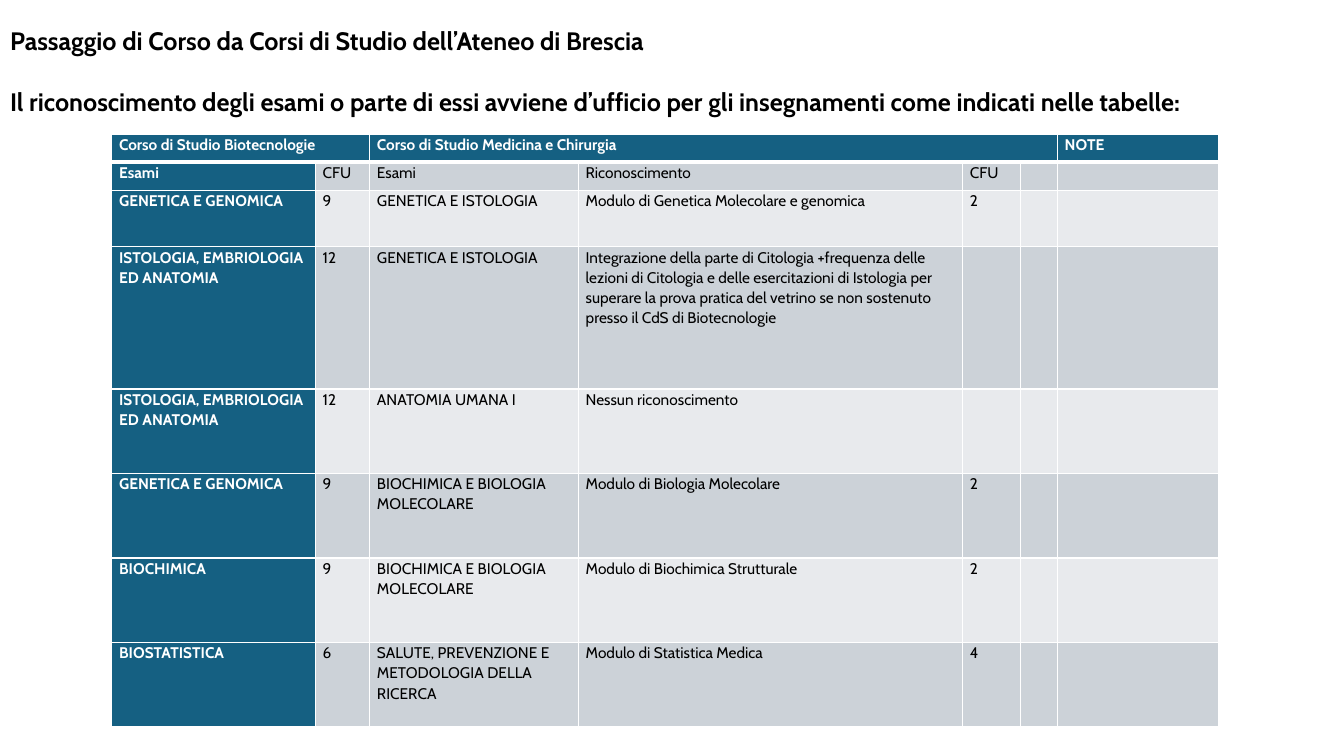
from dataclasses import dataclass

from lxml.etree import SubElement
from pptx import Presentation
from pptx.dml.color import RGBColor
from pptx.enum.text import MSO_ANCHOR, MSO_AUTO_SIZE, PP_ALIGN
from pptx.oxml.ns import qn
from pptx.util import Cm, Pt


@dataclass(frozen=True)
class Theme:
    """Colours, font and type sizes of the slide."""
    font: str = "Cabin"
    blue: str = "156082"
    dark: str = "CCD2D8"
    light: str = "E8EAED"
    white: str = "FFFFFF"
    black: str = "000000"
    title: int = 18
    body: int = 11


THEME = Theme()
TITLE = [
    "Passaggio di Corso da Corsi di Studio dell’Ateneo di Brescia",
    "Il riconoscimento degli esami o parte di essi avviene d’ufficio "
    "per gli insegnamenti come indicati nelle tabelle:",
]
COLS = [5.13, 1.37, 5.26, 9.68, 1.45, 0.94, 4.06]
HEIGHTS = [0.71, 0.71, 1.42, 3.58] + [2.13] * 4
SPANS = [(0, 1), (2, 5)]
ROWS = [
    ["Corso di Studio Biotecnologie", "", "Corso di Studio Medicina e Chirurgia",
     "", "", "", "NOTE"],
    ["Esami", "CFU", "Esami", "Riconoscimento", "CFU", "", ""],
    ["GENETICA E GENOMICA", "9", "GENETICA E ISTOLOGIA",
     "Modulo di Genetica Molecolare e genomica", "2", "", ""],
    ["ISTOLOGIA, EMBRIOLOGIA ED ANATOMIA", "12", "GENETICA E ISTOLOGIA",
     "Integrazione della parte di Citologia +frequenza delle lezioni di Citologia "
     "e delle esercitazioni di Istologia per superare la prova pratica del vetrino "
     "se non sostenuto presso il CdS di Biotecnologie", "", "", ""],
    ["ISTOLOGIA, EMBRIOLOGIA ED ANATOMIA", "12", "ANATOMIA UMANA I",
     "Nessun riconoscimento", "", "", ""],
    ["GENETICA E GENOMICA", "9", "BIOCHIMICA E BIOLOGIA MOLECOLARE",
     "Modulo di Biologia Molecolare", "2", "", ""],
    ["BIOCHIMICA", "9", "BIOCHIMICA E BIOLOGIA MOLECOLARE",
     "Modulo di Biochimica Strutturale", "2", "", ""],
    ["BIOSTATISTICA", "6", "SALUTE, PREVENZIONE E METODOLOGIA DELLA RICERCA",
     "Modulo di Statistica Medica", "4", "", ""],
]


def write(frame, lines, size, color, bold=False, after=0, spacing=1.0):
    """Write each line as a left-aligned paragraph in one format."""
    for i, line in enumerate(lines):
        para = frame.add_paragraph() if i else frame.paragraphs[0]
        para.alignment = PP_ALIGN.LEFT
        para.line_spacing = spacing
        para.space_before = Pt(0)
        para.space_after = Pt(after)
        if not line:
            SubElement(para._p, qn("a:endParaRPr"), sz=str(size * 100))
            continue
        run = para.add_run()
        run.text = line
        run.font.name = THEME.font
        run.font.size = Pt(size)
        run.font.bold = bold
        run.font.color.rgb = RGBColor.from_string(color)


def edge(cell, top, bottom):
    """Draw white borders round a cell, with the widths in points."""
    props = cell._tc.get_or_add_tcPr()
    for side, width in zip("LRTB", (1, 1, top, bottom)):
        line = SubElement(props, qn(f"a:ln{side}"), w=str(Pt(width)))
        fill = SubElement(line, qn("a:solidFill"))
        SubElement(fill, qn("a:srgbClr"), val=THEME.white)


def heading(slide, left, top, width, height):
    """Place the two-line title in its box."""
    title = slide.shapes.title
    title.left, title.top = Cm(left), Cm(top)
    title.width, title.height = Cm(width), Cm(height)
    frame = title.text_frame
    frame.word_wrap = True
    frame.auto_size = MSO_AUTO_SIZE.NONE
    frame.vertical_anchor = MSO_ANCHOR.TOP
    frame.margin_top = Cm(0.17)
    write(frame, TITLE, THEME.title, THEME.black, bold=True, after=22)


def grid(slide, left, top):
    """Place the table of recognised exams from its top left corner."""
    shape = slide.shapes.add_table(len(ROWS), len(COLS), Cm(left), Cm(top),
                                   Cm(sum(COLS)), Cm(sum(HEIGHTS)))
    table = shape.table
    table.first_row = table.horz_banding = False
    for col, width in zip(table.columns, COLS):
        col.width = Cm(width)
    for row, height in zip(table.rows, HEIGHTS):
        row.height = Cm(height)
    for start, end in SPANS:
        table.cell(0, start).merge(table.cell(0, end))
    for r, texts in enumerate(ROWS):
        for c, text in enumerate(texts):
            cell = table.cell(r, c)
            head = r == 0 or c == 0
            band = THEME.dark if r % 2 else THEME.light
            cell.margin_left = cell.margin_right = Cm(0.18)
            cell.margin_top = cell.margin_bottom = 0
            edge(cell, 3 if r == 1 else 1, 3 if r == 0 else 1)
            cell.fill.solid()
            cell.fill.fore_color.rgb = RGBColor.from_string(
                THEME.blue if head else band)
            write(cell.text_frame, [text], THEME.body,
                  THEME.white if head else THEME.black,
                  bold=head, after=8 if text else 0, spacing=1.07)


def main():
    """Build the slide and save it."""
    deck = Presentation()
    deck.slide_width, deck.slide_height = Cm(33.87), Cm(19.05)
    slide = deck.slides.add_slide(deck.slide_layouts[5])
    heading(slide, 0, 0.46, 32.56, 4.62)
    grid(slide, 2.82, 3.38)
    deck.save("out.pptx")


if __name__ == "__main__":
    main()
